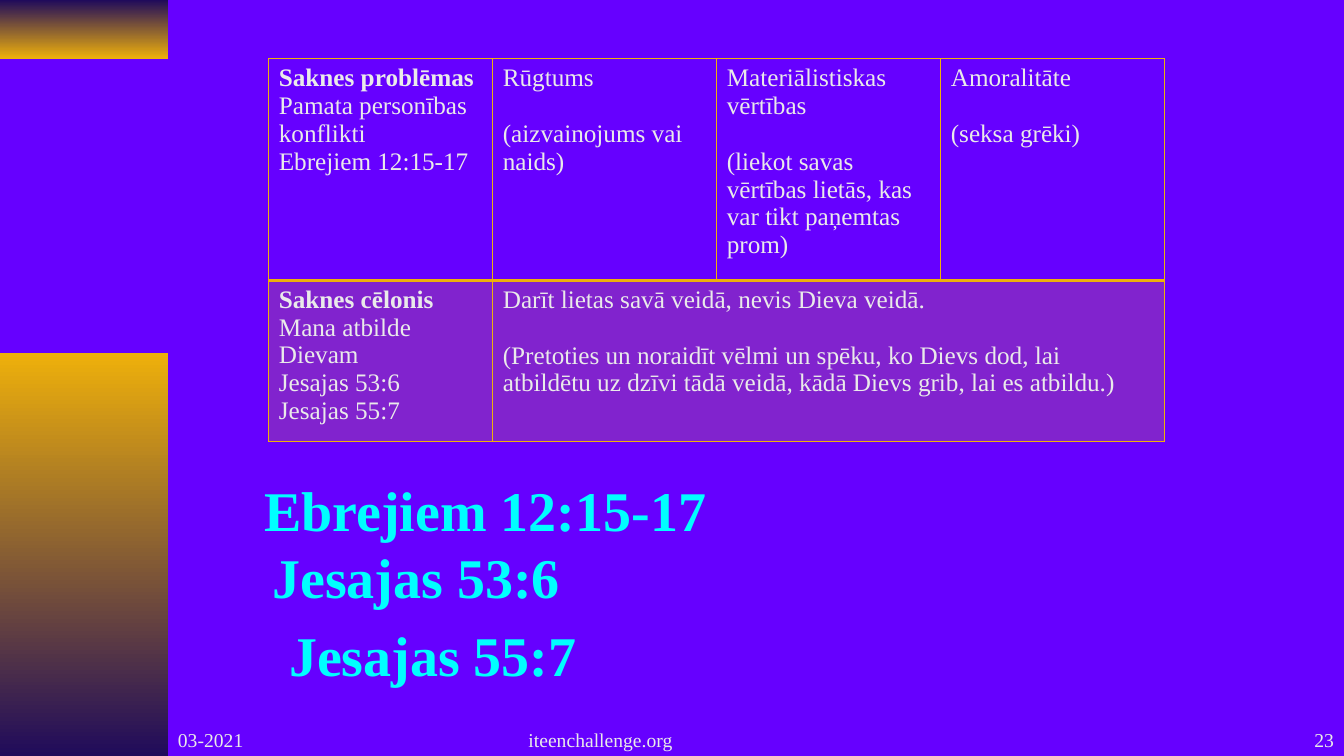
from dataclasses import dataclass

import pptx
import pptx.dml.color
import pptx.enum.shapes
import pptx.enum.text
import pptx.oxml
import pptx.oxml.ns
import pptx.util
from pptx.enum.text import MSO_ANCHOR, MSO_AUTO_SIZE, PP_ALIGN

COLORS = {
    "background": "6600FF",
    "gold": "EEB00B",
    "navy": "200B5B",
    "text": "EAEAEA",
    "verse": "00FFFF",
}
FONT = "Times New Roman"
COLUMNS, ROWS = 24, 90
WIDTH, HEIGHT = pptx.util.Inches(13.333), pptx.util.Inches(7.5)
BLANK_LINE = pptx.util.Pt(20)


@dataclass(frozen=True)
class Area:
    """A place on the slide, in grid columns and rows."""
    col: float
    row: float
    cols: float
    rows: float

    def emu(self) -> tuple[int, int, int, int]:
        return (across(self.col), down(self.row), across(self.cols), down(self.rows))


@dataclass(frozen=True)
class Band:
    area: Area
    top: str
    bottom: str


@dataclass(frozen=True)
class Label:
    text: str
    area: Area
    align: PP_ALIGN


@dataclass(frozen=True)
class Line:
    text: str
    bold: bool = False
    gap: bool = False


@dataclass(frozen=True)
class TableRow:
    height: float
    cells: list[list[Line]]
    bottom_pt: int
    shaded: bool


BANDS = [
    Band(Area(0, 0, 3, 7), "navy", "gold"),
    Band(Area(0, 42, 3, 48), "gold", "navy"),
]
FOOTERS = [
    Label("03-2021", Area(3, 84, 5, 6), PP_ALIGN.LEFT),
    Label("iteenchallenge.org", Area(5.7, 84, 10.05, 6), PP_ALIGN.CENTER),
    Label("23", Area(19, 84, 5, 6), PP_ALIGN.RIGHT),
]
VERSES = [
    Label("Ebrejiem 12:15-17", Area(4.5, 56, 8.33, 9.24), PP_ALIGN.CENTER),
    Label("Jesajas 53:6", Area(4.65, 64, 5.56, 9.24), PP_ALIGN.CENTER),
    Label("Jesajas 55:7", Area(4.95, 73.3, 5.56, 9.24), PP_ALIGN.CENTER),
]
TABLE_AREA = Area(4.8, 7, 16, 45.6)
TABLE_COLUMNS = 4
TABLE_ROWS = [
    TableRow(26.4, [
        [Line("Saknes problēmas", bold=True), Line("Pamata personības konflikti"),
         Line("Ebrejiem 12:15-17")],
        [Line("Rūgtums"), Line("(aizvainojums vai naids)", gap=True)],
        [Line("Materiālistiskas vērtības"),
         Line("(liekot savas vērtības lietās, kas var tikt paņemtas prom)", gap=True)],
        [Line("Amoralitāte"), Line("(seksa grēki)", gap=True)],
    ], bottom_pt=2, shaded=False),
    TableRow(19.2, [
        [Line("Saknes cēlonis", bold=True), Line("Mana atbilde Dievam"),
         Line("Jesajas 53:6"), Line("Jesajas 55:7")],
        [Line("Darīt lietas savā veidā, nevis Dieva veidā."),
         Line("(Pretoties un noraidīt vēlmi un spēku, ko Dievs dod, lai atbildētu uz "
              "dzīvi tādā veidā, kādā Dievs grib, lai es atbildu.)", gap=True)],
    ], bottom_pt=1, shaded=True),
]
FOOTER_FRAME = {"word_wrap": True, "vertical_anchor": MSO_ANCHOR.BOTTOM}
VERSE_FRAME = {"word_wrap": False, "auto_size": MSO_AUTO_SIZE.SHAPE_TO_FIT_TEXT}


def across(cols: float) -> int:
    return round(WIDTH * cols / COLUMNS)


def down(rows: float) -> int:
    return round(HEIGHT * rows / ROWS)


def rgb(name: str) -> pptx.dml.color.RGBColor:
    return pptx.dml.color.RGBColor.from_string(COLORS[name])


def apply(target, values: dict) -> None:
    for name, value in values.items():
        setattr(target, name, value)


def add_run(p, text: str, size: int, color: str, bold: bool) -> None:
    r = p.add_run()
    r.text = text
    apply(r.font, {"name": FONT, "size": pptx.util.Pt(size), "bold": bold})
    r.font.color.rgb = rgb(color)


def draw_band(s, band: Band) -> None:
    sp = s.shapes.add_shape(pptx.enum.shapes.MSO_SHAPE.RECTANGLE, *band.area.emu())
    sp.shadow.inherit = False
    sp.line.fill.background()
    sp.fill.gradient()
    sp.fill.gradient_angle = 270
    for stop, position, color in zip(sp.fill.gradient_stops, (0, 1), (band.top, band.bottom)):
        stop.position = position
        stop.color.rgb = rgb(color)


def draw_label(s, label: Label, frame: dict, size: int, color: str, bold: bool) -> None:
    tf = s.shapes.add_textbox(*label.area.emu()).text_frame
    apply(tf, frame)
    p = tf.paragraphs[0]
    p.alignment = label.align
    add_run(p, label.text, size, color, bold)


def add_borders(cell, bottom_pt: int) -> None:
    tc_pr = cell._tc.get_or_add_tcPr()
    for side, width in {"L": 1, "R": 1, "T": 1, "B": bottom_pt}.items():
        tc_pr.append(pptx.oxml.parse_xml(
            f'<a:ln{side} {pptx.oxml.ns.nsdecls("a")} w="{pptx.util.Pt(width)}">'
            f'<a:solidFill><a:srgbClr val="{COLORS["gold"]}"/></a:solidFill></a:ln{side}>'))


def fill_cell(cell, shaded: bool) -> None:
    """Shade the cell with one-fifth opaque gold, or leave it clear."""
    if not shaded:
        cell.fill.background()
        return
    cell.fill.solid()
    cell.fill.fore_color.rgb = rgb("gold")
    color = cell._tc.tcPr.find(pptx.oxml.ns.qn("a:solidFill"))[0]
    color.append(pptx.oxml.parse_xml(f'<a:alpha {pptx.oxml.ns.nsdecls("a")} val="20000"/>'))


def write_cell(cell, lines: list[Line]) -> None:
    tf = cell.text_frame
    for i, line in enumerate(lines):
        p = tf.add_paragraph() if i else tf.paragraphs[0]
        if line.gap:
            p.space_before = BLANK_LINE
        add_run(p, line.text, 18, "text", line.bold)


def draw_table(s) -> None:
    table = s.shapes.add_table(len(TABLE_ROWS), TABLE_COLUMNS, *TABLE_AREA.emu()).table
    apply(table, {"first_row": False, "horz_banding": False})
    for column in table.columns:
        column.width = across(TABLE_AREA.cols / TABLE_COLUMNS)
    for i, row in enumerate(TABLE_ROWS):
        table.rows[i].height = down(row.height)
        for cell in table.rows[i].cells:
            add_borders(cell, row.bottom_pt)
            fill_cell(cell, row.shaded)
        last = len(row.cells) - 1
        if last < TABLE_COLUMNS - 1:
            table.cell(i, last).merge(table.cell(i, TABLE_COLUMNS - 1))
        for j, lines in enumerate(row.cells):
            write_cell(table.cell(i, j), lines)


def main() -> None:
    prs = pptx.Presentation()
    apply(prs, {"slide_width": WIDTH, "slide_height": HEIGHT})
    s = prs.slides.add_slide(prs.slide_layouts[6])
    s.background.fill.solid()
    s.background.fill.fore_color.rgb = rgb("background")
    for band in BANDS:
        draw_band(s, band)
    draw_table(s)
    for verse in VERSES:
        draw_label(s, verse, VERSE_FRAME, 40, "verse", True)
    for footer in FOOTERS:
        draw_label(s, footer, FOOTER_FRAME, 14, "text", False)
    prs.save("out.pptx")


if __name__ == "__main__":
    main()
